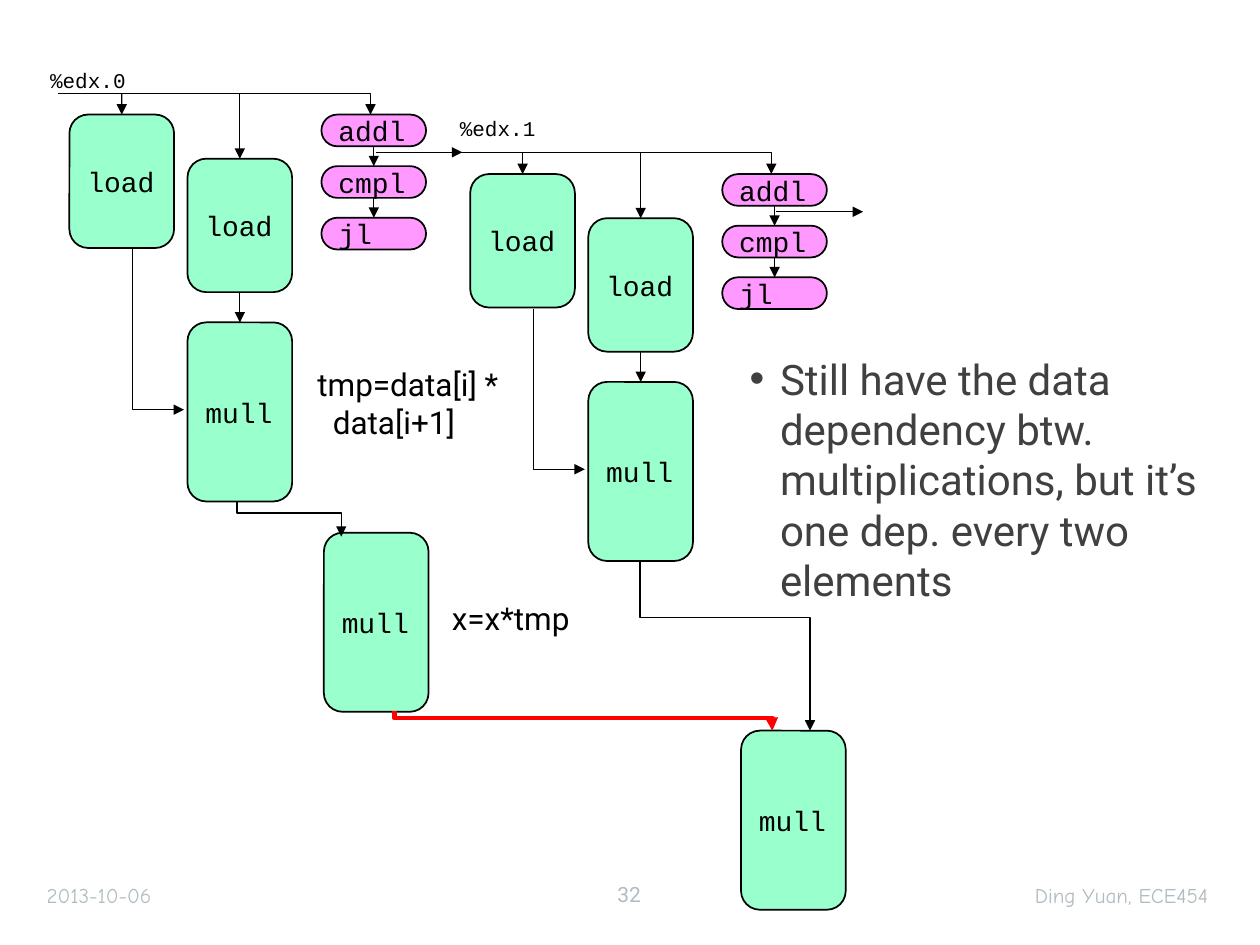
from lxml import etree
from pptx import Presentation
from pptx import util as u
from pptx.dml.color import RGBColor
from pptx.enum import shapes, text
from pptx.oxml.ns import qn

MONO, SANS, HAND = "Courier New", "Roboto", "Comic Neue"
BLACK, GREEN, PINK, RED = "000000", "99FFCC", "FF99FF", "FF0000"
GREY, PALE = "404040", "B0BCC1"
TOP, BOTTOM = 0, 2

# One loop iteration, in cm; the second one is shifted by STEP
STEP = (8.08, 1.2)
NODE_WIDTH = 2.11
HEIGHTS = {"load": 2.69, "mull": 3.61, "addl": 0.64, "cmpl": 0.64, "jl": 0.64}
NODES = {  # key: (label, left, top)
    "load 1": ("load", 1.4, 2.31),
    "load 2": ("load", 3.78, 3.2),
    "mull": ("mull", 3.78, 6.5),
    "addl": ("addl", 6.48, 2.31),
    "cmpl": ("cmpl", 6.48, 3.35),
    "jl": ("jl", 6.48, 4.39),
}
BUS_Y = 1.88
BUS_TARGETS = ["load 1", "load 2"]
LINKS = [("load 2", "mull"), ("addl", "cmpl"), ("cmpl", "jl")]
NEXT_INDEX = [(7.57, 3.07), (9.32, 3.07)]
ELBOWS = [
    [(1.17, BUS_Y), (7.47, BUS_Y), (7.47, 2.31)],
    [(2.67, 5.03), (2.67, 8.26), (3.71, 8.26)],
]

# Accumulating products and the paths between them
PRODUCTS = [("mull", 6.53, 10.74), ("mull", 14.94, 14.73)]
PRODUCT_PATHS = [  # points, colour, line width
    ([(4.78, 10.11), (4.78, 10.34), (6.88, 10.34), (6.88, 10.82)], BLACK, 0.75),
    ([(12.9, 11.3), (12.9, 12.45), (16.33, 12.45), (16.33, 14.73)], BLACK, 0.75),
    ([(7.95, 14.33), (7.95, 14.48), (15.57, 14.48), (15.57, 14.73)], RED, 2.5),
]

LEFT, CENTER, RIGHT = text.PP_ALIGN.LEFT, text.PP_ALIGN.CENTER, text.PP_ALIGN.RIGHT
LABELS = [  # lines, (left, top, width, height), font, size, colour, align, wrap
    (["%edx.0"], (0.76, 1.24, 2.06, 0.76), MONO, 12, BLACK, LEFT, False),
    (["%edx.1"], (9.02, 2.21, 2.06, 0.76), MONO, 12, BLACK, LEFT, False),
    (["tmp=data[i] *", "data[i+1]"], (6.15, 7.24, 4.24, 1.8), SANS, 18, BLACK, LEFT, False),
    (["x=x*tmp"], (8.86, 11.96, 3, 1.02), SANS, 18, BLACK, LEFT, False),
    (["2013-10-06"], (0.69, 17.7, 5.92, 0.71), HAND, 12, PALE, LEFT, True),
    (["32"], (11.63, 17.65, 2.11, 0.76), SANS, 12, PALE, CENTER, True),
    (["Ding Yuan, ECE454"], (16.56, 17.7, 8.05, 0.71), HAND, 12, PALE, RIGHT, True),
]
REMARK = ("Still have the data dependency btw. multiplications, "
          "but it’s one dep. every two elements")
REMARK_AREA = (14.86, 6.99, 9.96, 11.02)


def paint(color_format, value):
    color_format.rgb = RGBColor.from_string(value)


def set_font(para, name, size, color):
    para.font.name, para.font.size = name, u.Pt(size)
    paint(para.font.color, color)


def set_line(shape, color, width):
    shape.line.width = u.Pt(width)
    shape.line.fill.solid()
    paint(shape.line.fill.fore_color, color)


def add_arrowhead(shape):
    etree.SubElement(shape.line._get_or_add_ln(), qn("a:tailEnd"), type="triangle")


def add_node(page, label, left, top):
    node = page.shapes.add_shape(
        shapes.MSO_SHAPE.ROUNDED_RECTANGLE,
        *map(u.Cm, (left, top, NODE_WIDTH, HEIGHTS[label])))
    big = label in ("load", "mull")
    node.adjustments[0] = 0.18 if big else 0.5
    node.shadow.inherit = False
    node.fill.solid()
    paint(node.fill.fore_color, GREEN if big else PINK)
    set_line(node, BLACK, 1)
    frame = node.text_frame
    frame.word_wrap = False
    frame.vertical_anchor = text.MSO_ANCHOR.MIDDLE
    para = frame.paragraphs[0]
    para.text, para.alignment = label, LEFT
    set_font(para, MONO, 16, BLACK)
    return node


def add_arrow(page, start, end, source=None, target=None):
    arrow = page.shapes.add_connector(
        shapes.MSO_CONNECTOR.STRAIGHT, *map(u.Cm, (*start, *end)))
    if source is not None:
        arrow.begin_connect(source, BOTTOM)
    if target is not None:
        arrow.end_connect(target, TOP)
    set_line(arrow, BLACK, 0.75)
    add_arrowhead(arrow)
    etree.SubElement(arrow._element.spPr, qn("a:effectLst"))


def add_elbow(page, points, color=BLACK, width=0.75):
    first, *rest = [(u.Cm(x), u.Cm(y)) for x, y in points]
    builder = page.shapes.build_freeform(*first)
    builder.add_line_segments(rest, close=False)
    elbow = builder.convert_to_shape()
    elbow.shadow.inherit = False
    elbow.fill.background()
    set_line(elbow, color, width)
    add_arrowhead(elbow)


def add_iteration(page, dx, dy):
    def move(point):
        return point[0] + dx, point[1] + dy

    nodes = {key: add_node(page, label, *move((left, top)))
             for key, (label, left, top) in NODES.items()}
    for key in BUS_TARGETS:
        _, left, top = NODES[key]
        middle = left + NODE_WIDTH / 2
        add_arrow(page, move((middle, BUS_Y)), move((middle, top)), target=nodes[key])
    for source, target in LINKS:
        add_arrow(page, (0, 0), (0, 0), nodes[source], nodes[target])
    add_arrow(page, *map(move, NEXT_INDEX))
    for points in ELBOWS:
        add_elbow(page, [move(point) for point in points])


def add_label(page, lines, area, font, size, color, align, wrap):
    frame = page.shapes.add_textbox(*map(u.Cm, area)).text_frame
    frame.word_wrap = wrap
    if wrap:
        frame.vertical_anchor = text.MSO_ANCHOR.MIDDLE
    for number, line in enumerate(lines):
        para = frame.add_paragraph() if number else frame.paragraphs[0]
        para.text, para.alignment = line, align
        if number:  # continuation line is indented
            para._p.get_or_add_pPr().set("marL", str(u.Cm(0.31)))
        set_font(para, font, size, color)


def add_remark(page):
    box = page.placeholders[1]
    box.left, box.top, box.width, box.height = map(u.Cm, REMARK_AREA)
    frame = box.text_frame
    frame.word_wrap, frame.auto_size = True, text.MSO_AUTO_SIZE.NONE
    frame.vertical_anchor = text.MSO_ANCHOR.TOP
    para = frame.paragraphs[0]
    para.text, para.alignment, para.space_before = REMARK, LEFT, u.Pt(0)
    props = para._p.get_or_add_pPr()
    props.set("marL", str(u.Cm(0.61)))
    props.set("indent", str(u.Cm(-0.61)))
    bullet_color = etree.SubElement(props, qn("a:buClr"))
    etree.SubElement(bullet_color, qn("a:srgbClr"), val=GREY)
    etree.SubElement(props, qn("a:buChar"), char="•")
    set_font(para, SANS, 24, GREY)


def main():
    deck = Presentation()
    deck.slide_width, deck.slide_height = u.Cm(25.4), u.Cm(19.05)
    page = deck.slides.add_slide(deck.slide_layouts[1])
    title = page.shapes.title._element
    title.getparent().remove(title)

    # Data flow
    for turn in range(2):
        add_iteration(page, turn * STEP[0], turn * STEP[1])
    for product in PRODUCTS:
        add_node(page, *product)
    for route in PRODUCT_PATHS:
        add_elbow(page, *route)

    # Wording
    for label in LABELS:
        add_label(page, *label)
    add_remark(page)
    deck.save("out.pptx")


if __name__ == "__main__":
    main()
